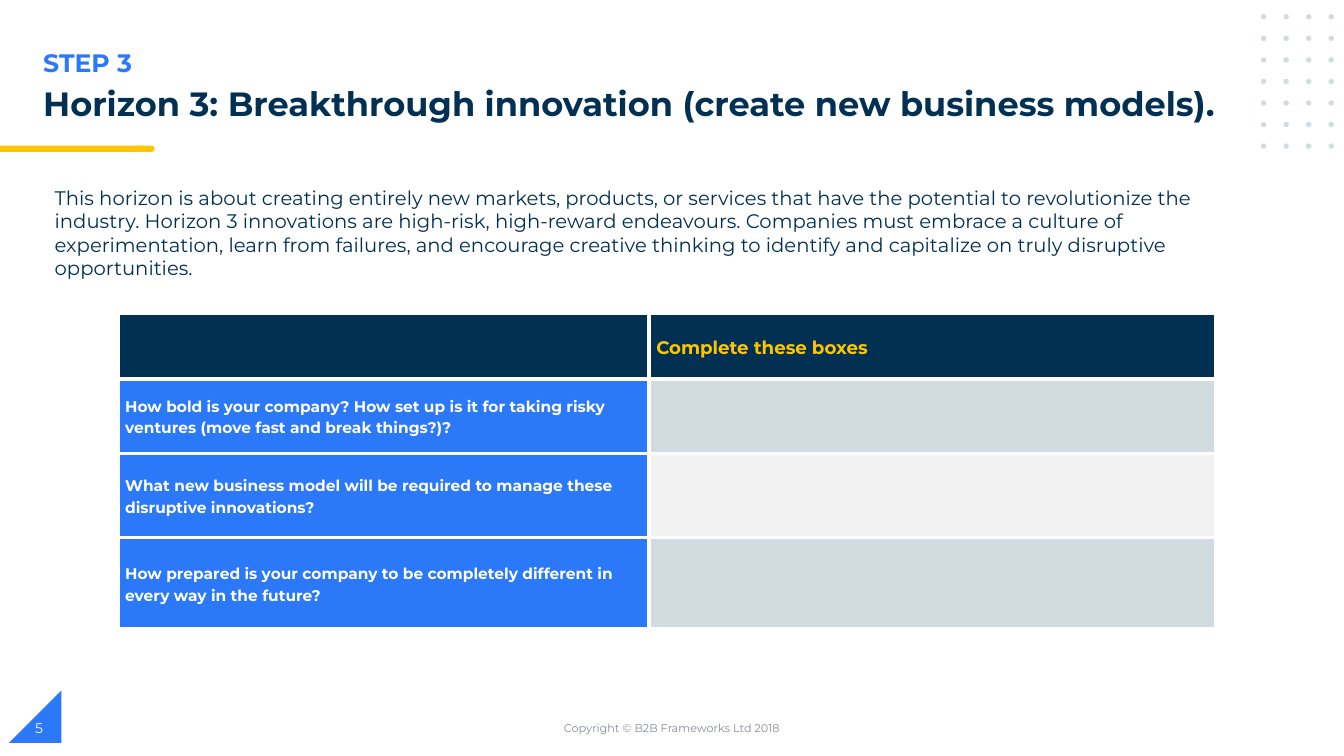
"""Build the Horizon 3 slide with its table of questions."""
import dataclasses

import lxml.etree
import pptx
import pptx.dml.color
import pptx.enum.shapes
import pptx.enum.text
import pptx.oxml.ns
import pptx.util

Pt = pptx.util.Pt
Shape = pptx.enum.shapes.MSO_SHAPE
Align = pptx.enum.text.PP_ALIGN
Anchor = pptx.enum.text.MSO_ANCHOR
qn = pptx.oxml.ns.qn


@dataclasses.dataclass(frozen=True)
class Theme:
    font: str = "Montserrat"
    navy: str = "023053"
    blue: str = "2B79F8"
    gold: str = "FFC600"
    mist: str = "D1DBE0"
    pale: str = "F2F2F2"
    gray: str = "888C97"
    white: str = "FFFFFF"
    title: int = 24
    step: int = 18
    body: int = 14
    head: int = 13
    cell: int = 11
    page: int = 10
    foot: int = 8


THEME = Theme()


def paint(fill, color):
    fill.solid()
    fill.fore_color.rgb = pptx.dml.color.RGBColor.from_string(color)


def write(frame, text, size, color, bold=False, align=Align.LEFT, space=1.0):
    frame.word_wrap = True
    line = frame.paragraphs[0]
    line.alignment = align
    line.line_spacing = space
    run = line.add_run()
    run.text = text
    run.font.name = THEME.font
    run.font.size = Pt(size)
    run.font.bold = bold
    paint(run.font.fill, color)


def add_text(slide, box, text, size, color, anchor=Anchor.TOP, **style):
    frame = slide.shapes.add_textbox(*map(Pt, box)).text_frame
    frame.vertical_anchor = anchor
    write(frame, text, size, color, **style)


def add_shape(slide, kind, box, color):
    shape = slide.shapes.add_shape(kind, *map(Pt, box))
    shape.shadow.inherit = False
    paint(shape.fill, color)
    shape.line.fill.background()
    return shape


def add_dots(slide, left, top, across, down):
    for row in range(7):
        for col in range(4):
            box = (left + col * across, top + row * down, 3.8, 3.8)
            add_shape(slide, Shape.OVAL, box, THEME.mist)


def add_edge(cell):
    props = cell._tc.get_or_add_tcPr()
    for side in ("a:lnL", "a:lnR", "a:lnT", "a:lnB"):
        line = lxml.etree.SubElement(props, qn(side), w=str(Pt(3)))
        solid = lxml.etree.SubElement(line, qn("a:solidFill"))
        lxml.etree.SubElement(solid, qn("a:srgbClr"), val=THEME.white)


def fill_cell(cell, color, text, size, ink):
    add_edge(cell)
    paint(cell.fill, color)
    cell.vertical_anchor = Anchor.MIDDLE
    cell.margin_left = cell.margin_right = Pt(5)
    cell.margin_top = cell.margin_bottom = 0
    if text:
        write(cell.text_frame, text, size, ink, bold=True, space=1.15)


def add_table(slide, left, top, widths, rows):
    heights = [row[0] for row in rows]
    box = (left, top, sum(widths), sum(heights))
    table = slide.shapes.add_table(len(rows), len(widths), *map(Pt, box)).table
    for col, width in zip(table.columns, widths):
        col.width = Pt(width)
    for index, (height, size, ink, *cells) in enumerate(rows):
        table.rows[index].height = Pt(height)
        for place, (color, text) in enumerate(cells):
            fill_cell(table.cell(index, place), color, text, size, ink)


def main():
    deck = pptx.Presentation()
    deck.slide_width, deck.slide_height = Pt(960), Pt(540)
    slide = deck.slides.add_slide(deck.slide_layouts[6])
    t = THEME

    corner = add_shape(slide, Shape.RIGHT_TRIANGLE, (6.5, 493.2, 37.4, 37.4), t.blue)
    corner._element.spPr.xfrm.set("flipH", "1")
    add_shape(slide, Shape.FLOWCHART_TERMINATOR, (96.5, 104, 14, 4.5), t.gold)
    add_shape(slide, Shape.RECTANGLE, (0, 104, 101.5, 4.5), t.gold)
    add_dots(slide, 900.7, 10.1, 16.1, 15.4)

    add_text(slide, (23.8, 30.2, 482, 29), "STEP 3", t.step, t.blue, bold=True)
    add_text(slide, (23.8, 59, 856, 40),
             "Horizon 3: Breakthrough innovation (create new business models).",
             t.title, t.navy, bold=True, space=0.9)
    add_text(slide, (32, 129, 881, 76),
             "This horizon is about creating entirely new markets, products, or services "
             "that have the potential to revolutionize the industry. Horizon 3 innovations "
             "are high-risk, high-reward endeavours. Companies must embrace a culture of "
             "experimentation, learn from failures, and encourage creative thinking to "
             "identify and capitalize on truly disruptive opportunities.",
             t.body, t.navy)

    add_table(slide, 84.4, 224, (379.4, 404.6), [
        (46.6, t.head, t.gold, (t.navy, ""), (t.navy, "Complete these boxes")),
        (53.4, t.cell, t.white,
         (t.blue, "How bold is your company? How set up is it for taking risky "
                  "ventures (move fast and break things?)?"), (t.mist, "")),
        (60, t.cell, t.white,
         (t.blue, "What new business model will be required to manage these "
                  "disruptive innovations?"), (t.pale, "")),
        (65.5, t.cell, t.white,
         (t.blue, "How prepared is your company to be completely different in "
                  "every way in the future?"), (t.mist, "")),
    ])

    add_text(slide, (318, 505.4, 324, 28.8), "Copyright © B2B Frameworks Ltd 2018",
             t.foot, t.gray, anchor=Anchor.MIDDLE, align=Align.CENTER)
    add_text(slide, (18, 505.4, 216, 28.8), "5", t.page, t.white, anchor=Anchor.MIDDLE)
    deck.save("out.pptx")


if __name__ == "__main__":
    main()
